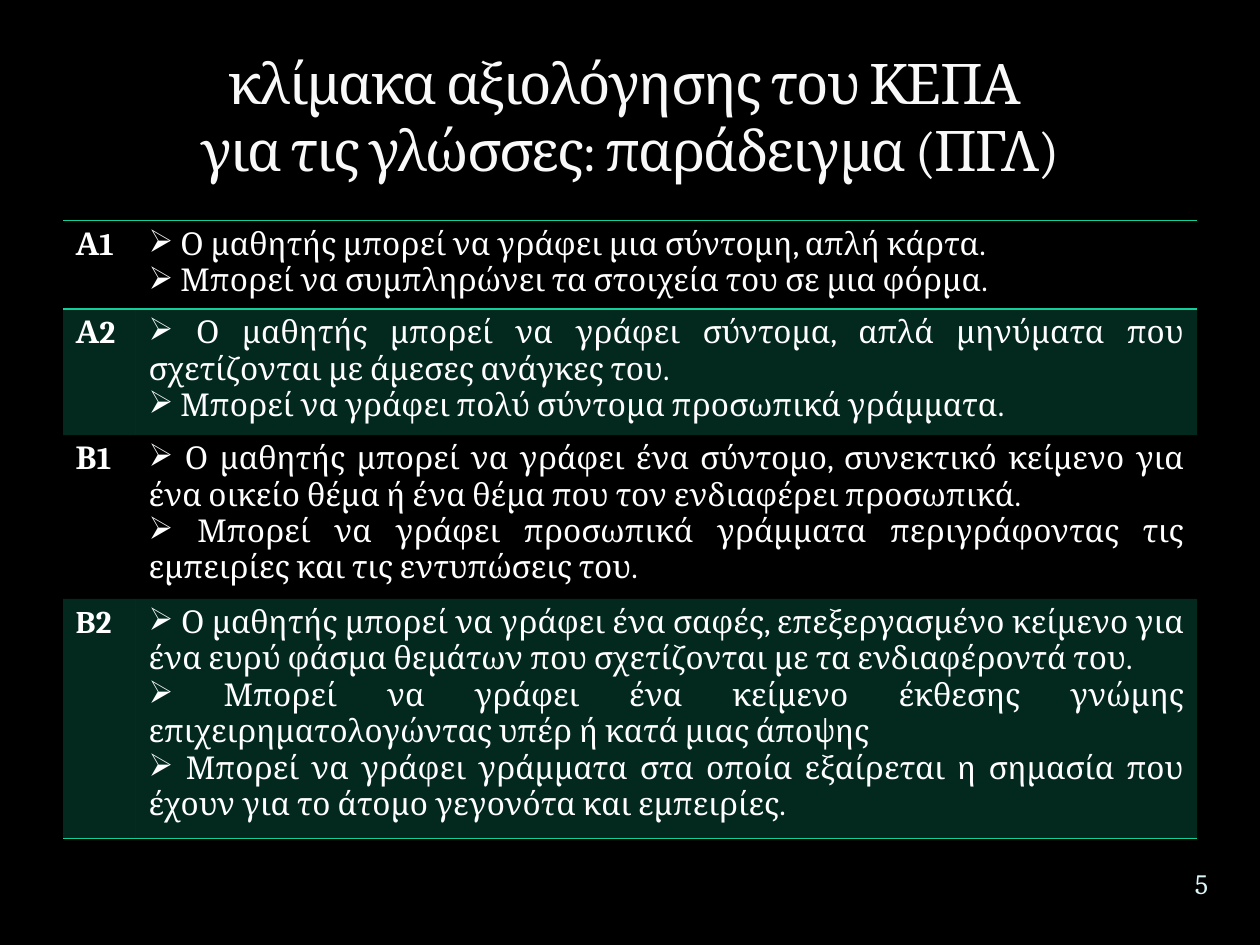
"""Build the slide with the KEPA writing scale, levels A1 to B2."""
from lxml import etree
from pptx import Presentation
from pptx.dml.color import RGBColor
from pptx.enum import text
from pptx.oxml import ns
from pptx.util import Cm, Pt

FONT = "Cambria"
WHITE, GREEN = "FFFFFF", "10CF9B"
NO_STYLE = "{2D5ABB26-0587-4C30-8999-92F81FD0307C}"
TITLE = "κλίμακα αξιολόγησης του ΚΕΠΑ \vγια τις γλώσσες: παράδειγμα (ΠΓΛ)"
LEVELS = [
    ("Α1", 1.78, [
        "Ο μαθητής μπορεί να γράφει μια σύντομη, απλή κάρτα.",
        "Μπορεί να συμπληρώνει τα στοιχεία του σε μια φόρμα.",
    ]),
    ("Α2", 2.54, [
        "Ο μαθητής μπορεί να γράφει σύντομα, απλά μηνύματα που σχετίζονται με άμεσες ανάγκες του.",
        "Μπορεί να γράφει πολύ σύντομα προσωπικά γράμματα.",
    ]),
    ("Β1", 3.3, [
        "Ο μαθητής μπορεί να γράφει ένα σύντομο, συνεκτικό κείμενο για ένα οικείο θέμα "
        "ή ένα θέμα που τον ενδιαφέρει προσωπικά.",
        "Μπορεί να γράφει προσωπικά γράμματα περιγράφοντας τις εμπειρίες και τις εντυπώσεις του.",
    ]),
    ("B2", 4.83, [
        "Ο μαθητής μπορεί να γράφει ένα σαφές, επεξεργασμένο κείμενο για ένα ευρύ φάσμα "
        "θεμάτων που σχετίζονται με τα ενδιαφέροντά του.",
        "Μπορεί να γράφει ένα κείμενο έκθεσης γνώμης επιχειρηματολογώντας υπέρ ή κατά μιας άποψης",
        "Μπορεί να γράφει γράμματα στα οποία εξαίρεται η σημασία που έχουν για το άτομο "
        "γεγονότα και εμπειρίες.",
    ]),
]
COLUMNS = (1.47, 21.39)


def rgb(value):
    return RGBColor.from_string(value)


def add_child(parent, tag, **attributes):
    return etree.SubElement(parent, ns.qn(tag), attributes)


def style(para, size, color, align, bold=False):
    para.alignment = align
    for span in para.runs:
        span.font.name = FONT
        span.font.size = Pt(size)
        span.font.bold = bold
        span.font.color.rgb = rgb(color)


def add_text(page, words, place, size, color, anchor):
    box = page.shapes.add_textbox(*map(Cm, place))
    frame = box.text_frame
    frame.word_wrap = True
    frame.vertical_anchor = anchor
    frame.text = words
    style(frame.paragraphs[0], size, color, text.PP_ALIGN.CENTER)
    return frame


def add_rule(cell, tag):
    line = etree.Element(ns.qn(tag), w=str(Pt(1)))
    add_child(add_child(line, "a:solidFill"), "a:srgbClr", val=GREEN)
    return line


def decorate(cell, shaded, edges):
    if shaded:
        cell.fill.solid()
        cell.fill.fore_color.rgb = rgb(GREEN)
        color = cell._tc.tcPr.find(".//" + ns.qn("a:srgbClr"))
        add_child(color, "a:alpha", val="20000")
    else:
        cell.fill.background()
    for position, tag in enumerate(edges):
        cell._tc.tcPr.insert(position, add_rule(cell, tag))


def fill_skills(cell, skills):
    frame = cell.text_frame
    for index, skill in enumerate(skills):
        para = frame.add_paragraph() if index else frame.paragraphs[0]
        para.text = " " + skill
        add_child(para._p.get_or_add_pPr(), "a:buChar", char="➢")
        style(para, 18, WHITE, text.PP_ALIGN.JUSTIFY)


def add_levels(page):
    height = sum(level[1] for level in LEVELS)
    frame = page.shapes.add_table(len(LEVELS), 2, Cm(1.27), Cm(4.45), Cm(sum(COLUMNS)), Cm(height))
    table = frame.table
    table.first_row = table.horz_banding = False
    table._tbl.tblPr.find(ns.qn("a:tableStyleId")).text = NO_STYLE
    for column, width in zip(table.columns, COLUMNS):
        column.width = Cm(width)
    edges = {0: ("a:lnT", "a:lnB"), len(LEVELS) - 1: ("a:lnB",)}
    for index, (name, row_height, skills) in enumerate(LEVELS):
        table.rows[index].height = Cm(row_height)
        label, detail = table.rows[index].cells
        label.text_frame.text = name
        style(label.text_frame.paragraphs[0], 18, WHITE, text.PP_ALIGN.LEFT, bold=True)
        fill_skills(detail, skills)
        for cell in (label, detail):
            decorate(cell, index % 2 == 1, edges.get(index, ()))


def main():
    deck = Presentation()
    deck.slide_width, deck.slide_height = Cm(25.4), Cm(19.05)
    page = deck.slides.add_slide(deck.slide_layouts[6])
    page.background.fill.solid()
    page.background.fill.fore_color.rgb = rgb("000000")
    title = add_text(page, TITLE, (1.27, 0.43, 22.86, 3.38), 32, "F9F9F9", text.MSO_ANCHOR.BOTTOM)
    for span in title.paragraphs[0].runs:
        span.font._element.set("spc", "-100")
    add_levels(page)
    number = add_text(page, "5", (23.37, 17.17, 1.7, 1.27), 16, "DBF5F9", text.MSO_ANCHOR.MIDDLE)
    number.margin_left = number.margin_right = number.margin_top = number.margin_bottom = 0
    deck.save("out.pptx")


if __name__ == "__main__":
    main()
